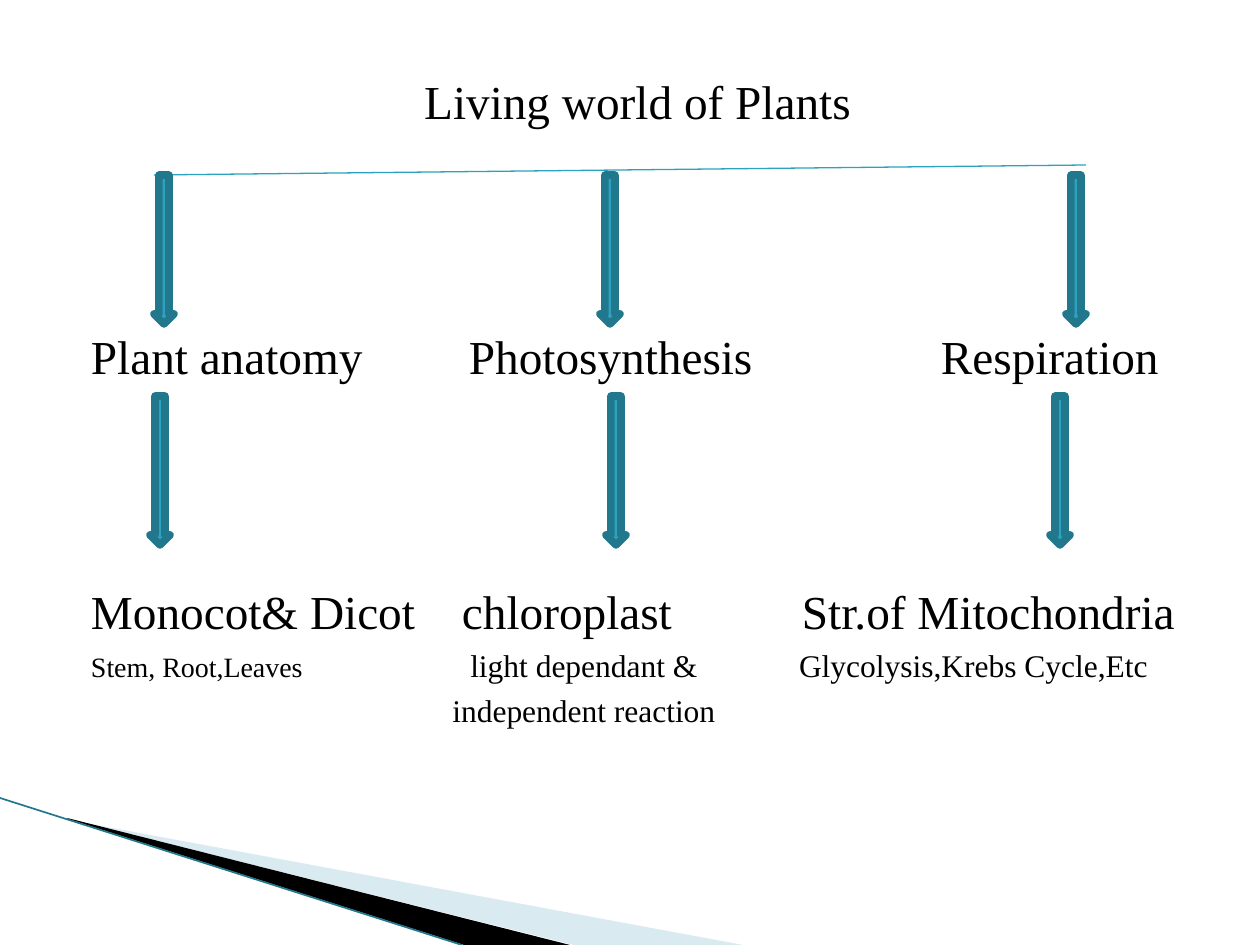
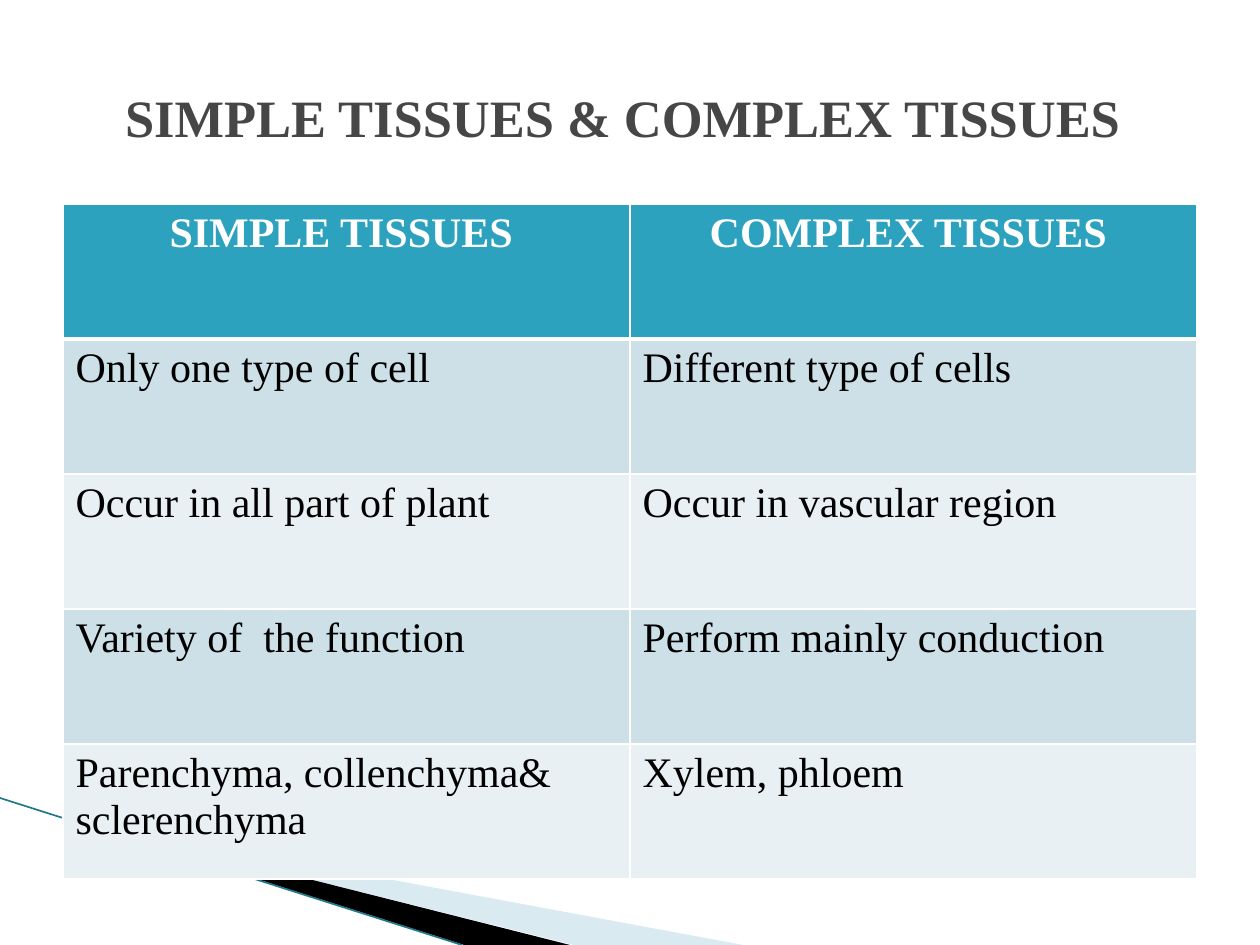
from dataclasses import dataclass

from lxml import etree
from pptx import Presentation
from pptx.dml.color import RGBColor
from pptx.enum.shapes import MSO_CONNECTOR, MSO_SHAPE
from pptx.enum.text import MSO_ANCHOR, PP_ALIGN
from pptx.oxml.ns import qn
from pptx.slide import Slide
from pptx.table import _Cell
from pptx.text.text import _Paragraph
from pptx.util import Emu, Pt

LEFT = PP_ALIGN.LEFT
CENTER = PP_ALIGN.CENTER
TOP = MSO_ANCHOR.TOP
MIDDLE = MSO_ANCHOR.MIDDLE
DOWN_ARROW = MSO_SHAPE.DOWN_ARROW
STRAIGHT = MSO_CONNECTOR.STRAIGHT

PX_PER_INCH = 126
SLIDE_WIDTH, SLIDE_HEIGHT = 1260, 945
FONT = "Times New Roman"
COLORS = {
    "text": "000000",
    "title": "464646",
    "white": "FFFFFF",
    "accent": "2DA2BF",
    "accent_dark": "21788D",
    "swoosh_light": "A0CBDC",
    "swoosh_dark": "000000",
    "band_odd": "CDE0E8",
    "band_even": "E8F0F4",
}

ARROW_WIDTH, ARROW_HEIGHT = 20, 149
UPPER_ARROW_TOP, LOWER_ARROW_TOP = 175, 396
HEADING_TOP, TOPIC_TOP, DETAIL_TOP = 327, 582, 646
TABLE_LEFT, TABLE_TOP = 63, 204
COLUMN_WIDTH, ROW_HEIGHT = 567, 135
THIN_BORDER, HEADER_BORDER = 1, 3


@dataclass(frozen=True)
class Swoosh:
    points: tuple[tuple[int, int], ...]
    color: str
    opacity: int = 100


@dataclass(frozen=True)
class Rule:
    start: tuple[int, int]
    end: tuple[int, int]
    color: str
    weight: float


@dataclass(frozen=True)
class Label:
    lines: tuple[str, ...]
    left: int
    top: int
    width: int
    height: int
    size: int = 27
    align: PP_ALIGN = LEFT
    anchor: MSO_ANCHOR = TOP
    color: str = "text"
    bold: bool = False


@dataclass(frozen=True)
class Arrow:
    left: int
    top: int


SWOOSHES = (
    Swoosh(((69, 820), (743, 945), (574, 945), (69, 819)), "swoosh_light", 40),
    Swoosh(((67, 818), (570, 945), (464, 945), (68, 819)), "swoosh_dark"),
)
SWOOSH_EDGE = Rule((0, 798), (462, 945), "accent_dark", 0.95)

BRANCH_RULE = Rule((154, 175), (1086, 165), "accent", 0.75)
BRANCH_ARROWS = (
    Arrow(154, UPPER_ARROW_TOP),
    Arrow(600, UPPER_ARROW_TOP),
    Arrow(1066, UPPER_ARROW_TOP),
    Arrow(150, LOWER_ARROW_TOP),
    Arrow(606, LOWER_ARROW_TOP),
    Arrow(1050, LOWER_ARROW_TOP),
)
BRANCH_LABELS = (
    Label(("Living world of Plants",), 78, 72, 1119, 56, align=CENTER),
    Label(("Plant anatomy",), 91, HEADING_TOP, 320, 56),
    Label(("Photosynthesis",), 469, HEADING_TOP, 320, 56),
    Label(("Respiration",), 941, HEADING_TOP, 256, 56),
    Label(("Monocot& Dicot",), 91, TOPIC_TOP, 350, 56),
    Label(("chloroplast",), 462, TOPIC_TOP, 320, 56),
    Label(("Str.of Mitochondria",), 802, TOPIC_TOP, 395, 56),
    Label(("Stem, Root,Leaves",), 91, DETAIL_TOP + 4, 320, 36, size=16),
    Label(("light dependant &", "independent reaction"),
          434, DETAIL_TOP, 300, 84, size=18, align=CENTER),
    Label(("Glycolysis,Krebs Cycle,Etc",), 799, DETAIL_TOP, 398, 40, size=18),
)

TISSUE_TITLE = Label(
    ("SIMPLE TISSUES & COMPLEX TISSUES",), 64, 37, 1118, 158,
    size=30, align=CENTER, anchor=MIDDLE, color="title", bold=True,
)
TISSUE_ROWS = (
    ("SIMPLE TISSUES ", "COMPLEX TISSUES "),
    ("Only one type of cell", "Different type of cells"),
    ("Occur in all part of plant", "Occur in vascular region"),
    ("Variety of  the function", "Perform mainly conduction"),
    ("Parenchyma, collenchyma& sclerenchyma", "Xylem, phloem"),
)


def px(length: int) -> Emu:
    return Emu(round(length * 914400 / PX_PER_INCH))


def rgb(name: str) -> RGBColor:
    return RGBColor.from_string(COLORS[name])


def add_run(paragraph: _Paragraph, text: str, size: int, color: str, bold: bool) -> None:
    run = paragraph.add_run()
    run.text = text
    run.font.name = FONT
    run.font.size = Pt(size)
    run.font.bold = bold
    run.font.color.rgb = rgb(color)


def add_rule(slide: Slide, rule: Rule) -> None:
    connector = slide.shapes.add_connector(
        STRAIGHT, *(px(value) for value in rule.start + rule.end)
    )
    connector.line.color.rgb = rgb(rule.color)
    connector.line.width = Pt(rule.weight)
    etree.SubElement(connector._element.spPr, qn("a:effectLst"))


def add_swoosh(slide: Slide, swoosh: Swoosh) -> None:
    points = [(px(x), px(y)) for x, y in swoosh.points]
    builder = slide.shapes.build_freeform(*points[0])
    builder.add_line_segments(points[1:], close=True)
    shape = builder.convert_to_shape()
    shape.shadow.inherit = False
    shape.fill.solid()
    shape.fill.fore_color.rgb = rgb(swoosh.color)
    shape.line.fill.background()
    if swoosh.opacity < 100:
        color = shape._element.spPr.find(qn("a:solidFill")).find(qn("a:srgbClr"))
        etree.SubElement(color, qn("a:alpha"), val=str(swoosh.opacity * 1000))


def add_label(slide: Slide, label: Label) -> None:
    box = slide.shapes.add_textbox(
        px(label.left), px(label.top), px(label.width), px(label.height)
    )
    frame = box.text_frame
    frame.word_wrap = True
    frame.vertical_anchor = label.anchor
    frame.margin_left = frame.margin_right = 0
    frame.margin_top = frame.margin_bottom = 0
    for index, line in enumerate(label.lines):
        paragraph = frame.add_paragraph() if index else frame.paragraphs[0]
        paragraph.alignment = label.align
        if index:
            paragraph.space_before = Pt(4)
        add_run(paragraph, line, label.size, label.color, label.bold)


def add_arrow(slide: Slide, arrow: Arrow) -> None:
    shape = slide.shapes.add_shape(
        DOWN_ARROW, px(arrow.left), px(arrow.top), px(ARROW_WIDTH), px(ARROW_HEIGHT)
    )
    shape.shadow.inherit = False
    shape.fill.solid()
    shape.fill.fore_color.rgb = rgb("accent")
    shape.line.color.rgb = rgb("accent_dark")
    shape.line.width = Pt(4.33)


def set_borders(cell: _Cell, top: int, bottom: int) -> None:
    properties = cell._tc.get_or_add_tcPr()
    weights = {"lnL": THIN_BORDER, "lnR": THIN_BORDER, "lnT": top, "lnB": bottom}
    for side, weight in weights.items():
        border = etree.SubElement(properties, qn(f"a:{side}"), w=str(Pt(weight)))
        fill = etree.SubElement(border, qn("a:solidFill"))
        etree.SubElement(fill, qn("a:srgbClr"), val=COLORS["white"])


def add_tissue_table(slide: Slide) -> None:
    row_count, column_count = len(TISSUE_ROWS), len(TISSUE_ROWS[0])
    table = slide.shapes.add_table(
        row_count, column_count, px(TABLE_LEFT), px(TABLE_TOP),
        px(column_count * COLUMN_WIDTH), px(row_count * ROW_HEIGHT),
    ).table
    table.horz_banding = False
    for column in table.columns:
        column.width = px(COLUMN_WIDTH)
    for row_index, texts in enumerate(TISSUE_ROWS):
        table.rows[row_index].height = px(ROW_HEIGHT)
        is_header = row_index == 0
        band = "band_odd" if row_index % 2 else "band_even"
        for column_index, text in enumerate(texts):
            cell = table.cell(row_index, column_index)
            set_borders(
                cell,
                top=HEADER_BORDER if row_index == 1 else THIN_BORDER,
                bottom=HEADER_BORDER if is_header else THIN_BORDER,
            )
            cell.fill.solid()
            cell.fill.fore_color.rgb = rgb("accent" if is_header else band)
            paragraph = cell.text_frame.paragraphs[0]
            paragraph.alignment = CENTER if is_header else LEFT
            add_run(paragraph, text, 24, "white" if is_header else "text", is_header)


def add_base_slide(presentation: Presentation) -> Slide:
    slide = presentation.slides.add_slide(presentation.slide_layouts[6])
    slide.background.fill.solid()
    slide.background.fill.fore_color.rgb = rgb("white")
    for swoosh in SWOOSHES:
        add_swoosh(slide, swoosh)
    add_rule(slide, SWOOSH_EDGE)
    return slide


def build_plants_slide(presentation: Presentation) -> None:
    slide = add_base_slide(presentation)
    for label in BRANCH_LABELS:
        add_label(slide, label)
    add_rule(slide, BRANCH_RULE)
    for arrow in BRANCH_ARROWS:
        add_arrow(slide, arrow)


def build_tissues_slide(presentation: Presentation) -> None:
    slide = add_base_slide(presentation)
    add_tissue_table(slide)
    add_label(slide, TISSUE_TITLE)


def main() -> None:
    presentation = Presentation()
    presentation.slide_width = px(SLIDE_WIDTH)
    presentation.slide_height = px(SLIDE_HEIGHT)
    build_plants_slide(presentation)
    build_tissues_slide(presentation)
    presentation.save("out.pptx")


if __name__ == "__main__":
    main()
